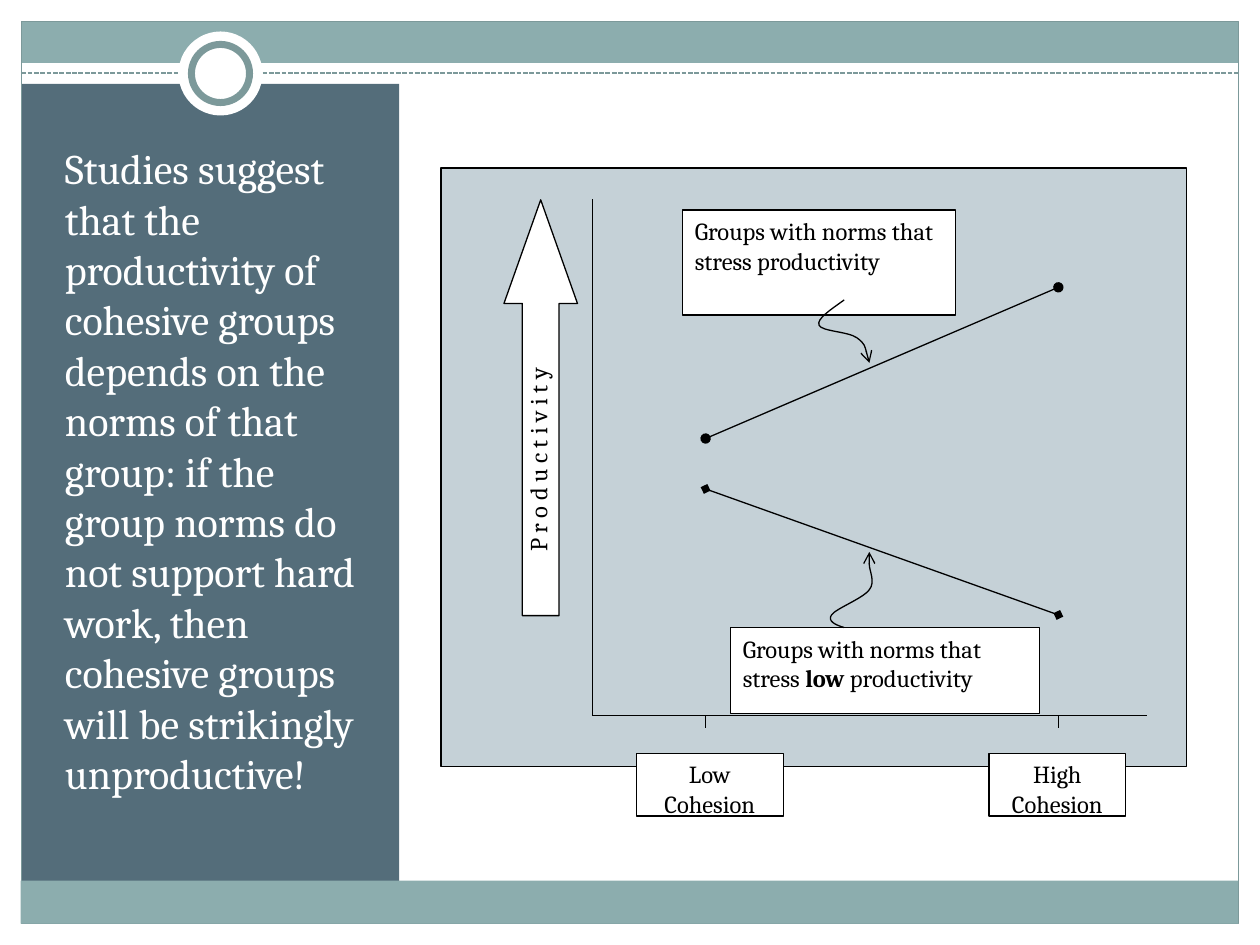
from lxml.etree import SubElement
from pptx import Presentation
from pptx.dml.color import RGBColor
from pptx.enum.dml import MSO_LINE
from pptx.enum.shapes import MSO_CONNECTOR, MSO_SHAPE
from pptx.enum.text import MSO_ANCHOR, PP_ALIGN
from pptx.oxml.ns import qn
from pptx.util import Pt

WHITE = RGBColor(0xFF, 0xFF, 0xFF)
BLACK = RGBColor(0x00, 0x00, 0x00)
SAGE = RGBColor(0x8C, 0xAD, 0xAE)
SAGE_DARK = RGBColor(0x7C, 0x99, 0x9A)
SLATE = RGBColor(0x54, 0x6D, 0x7A)
PANEL = RGBColor(0xC5, 0xD1, 0xD7)
FONT = "Cambria"
THIN = 0.75

AXIS_LEFT, AXIS_RIGHT, AXIS_TOP, AXIS_BOTTOM = 338.4, 655.2, 113.8, 409
LOW_X, HIGH_X = 403.2, 604.8

STATEMENT = (
    "Studies suggest that the productivity of cohesive groups depends on the "
    "norms of that group: if the group norms do not support hard work, then "
    "cohesive groups will be strikingly unproductive!"
)


def add_figure(slide, kind, box, fill=None, line=None, width=THIN):
    shape = slide.shapes.add_shape(kind, *map(Pt, box))
    shape.shadow.inherit = False
    if fill is None:
        shape.fill.background()
    else:
        shape.fill.solid()
        shape.fill.fore_color.rgb = fill
    if line is None:
        shape.line.fill.background()
    else:
        shape.line.color.rgb = line
        shape.line.width = Pt(width)
    return shape


def add_arrowheads(shape, head=None, tail=None):
    line = shape.line._get_or_add_ln()
    for tag, kind in (("a:headEnd", head), ("a:tailEnd", tail)):
        if kind:
            SubElement(line, qn(tag)).set("type", kind)


def add_line(slide, start, end, color=BLACK, width=THIN):
    connector = slide.shapes.add_connector(
        MSO_CONNECTOR.STRAIGHT, *map(Pt, (*start, *end)))
    connector.line.color.rgb = color
    connector.line.width = Pt(width)
    SubElement(connector._element.spPr, qn("a:effectLst"))
    return connector


def add_curved_arrow(slide, start, *controls):
    """Draw cubic curves; each three points after start make one curve."""
    builder = slide.shapes.build_freeform(Pt(start[0]), Pt(start[1]))
    builder.add_line_segments([(Pt(x), Pt(y)) for x, y in controls], close=False)
    shape = builder.convert_to_shape()
    segments = list(shape._element.iter(qn("a:lnTo")))
    for index in range(0, len(segments), 3):
        curve = SubElement(segments[index].getparent(), qn("a:cubicBezTo"))
        for segment in segments[index:index + 3]:
            curve.append(segment[0])
            segment.getparent().remove(segment)
    shape.shadow.inherit = False
    shape.fill.background()
    shape.line.color.rgb = BLACK
    shape.line.width = Pt(THIN)
    add_arrowheads(shape, tail="arrow")


def set_text(shape, runs, size=14, color=BLACK, alignment=PP_ALIGN.LEFT):
    """Fill a shape with one paragraph; runs are (text, bold) pairs."""
    frame = shape.text_frame
    frame.word_wrap = True
    frame.vertical_anchor = MSO_ANCHOR.TOP
    paragraph = frame.paragraphs[0]
    paragraph.alignment = alignment
    paragraph.font.name = FONT
    paragraph.font.size = Pt(size)
    paragraph.font.color.rgb = color
    for text, bold in runs:
        run = paragraph.add_run()
        run.text = text
        if bold:
            run.font.bold = True
    return paragraph


def add_label(slide, box, runs, alignment=PP_ALIGN.LEFT):
    shape = add_figure(slide, MSO_SHAPE.RECTANGLE, box, WHITE, BLACK)
    set_text(shape, runs, alignment=alignment)


def add_frame(slide):
    divider = add_line(slide, (12.2, 41.8), (707.8, 41.8), SAGE_DARK, 0.9)
    divider.line.dash_style = MSO_LINE.SQUARE_DOT
    add_figure(slide, MSO_SHAPE.RECTANGLE, (12.2, 12.2, 695.6, 23.8), SAGE)
    add_figure(slide, MSO_SHAPE.RECTANGLE, (12.2, 48, 216, 462.2), SLATE)
    add_figure(slide, MSO_SHAPE.RECTANGLE, (12.2, 12.2, 695.6, 515.6), line=SAGE_DARK)
    add_figure(slide, MSO_SHAPE.OVAL, (102, 18, 48, 48), WHITE)
    add_figure(slide, MSO_SHAPE.OVAL, (109.4, 25.4, 33.2, 33.2), WHITE, SAGE_DARK, 4)
    add_figure(slide, MSO_SHAPE.RECTANGLE, (11.8, 503.3, 695.6, 24.5), SAGE)


def add_statement(slide):
    box = slide.shapes.add_textbox(Pt(30), Pt(78), Pt(192), Pt(414))
    paragraph = set_text(box, [(STATEMENT, False)], 24, WHITE)
    paragraph.space_before = Pt(4.8)
    paragraph.space_after = Pt(10)


def add_diagram(slide):
    add_figure(slide, MSO_SHAPE.RECTANGLE, (252, 96, 426, 342), PANEL, BLACK)
    for low_y, high_y, marker in ((250.6, 164.2, "oval"), (279.4, 351.4, "diamond")):
        trend = add_line(slide, (LOW_X, low_y), (HIGH_X, high_y))
        add_arrowheads(trend, marker, marker)

    add_label(slide, (390, 120, 156, 60),
              [("Groups with norms that stress productivity", False)])
    add_label(slide, (417.4, 358.6, 176.6, 49.2),
              [("Groups with norms that stress ", False), ("low", True),
               (" productivity", False)])
    add_curved_arrow(slide, (482.4, 358.6),
                     (477.4, 357.1), (472.8, 355), (475.2, 351.4),
                     (477.6, 347.8), (493.2, 342), (496.8, 337),
                     (500.4, 332.6), (496.8, 326.2), (496.8, 322.6),
                     (496.8, 319), (496.8, 316.8), (496.8, 315.4))
    add_curved_arrow(slide, (482.4, 171.4),
                     (474.5, 177.1), (466.6, 182.2), (468, 185.8),
                     (469.4, 189.4), (484.6, 189.4), (489.6, 193),
                     (494.6, 196.6), (495.4, 202.3), (496.8, 207.4))

    add_line(slide, (AXIS_LEFT, AXIS_BOTTOM), (AXIS_RIGHT, AXIS_BOTTOM))
    add_line(slide, (AXIS_LEFT, AXIS_BOTTOM), (AXIS_LEFT, AXIS_TOP))
    for x in (LOW_X, HIGH_X):
        add_line(slide, (x, AXIS_BOTTOM), (x, AXIS_BOTTOM + 7.2))

    arrow = add_figure(slide, MSO_SHAPE.UP_ARROW, (288, 114.2, 42, 237.6), WHITE, BLACK)
    arrow.adjustments[0] = 0.5
    arrow.adjustments[1] = 1.41
    axis_title = slide.shapes.add_textbox(Pt(237.6), Pt(247.7), Pt(145.4), Pt(30.2))
    axis_title.rotation = 270
    set_text(axis_title, [("P r o d u c t i v i t y", False)],
             alignment=PP_ALIGN.CENTER)

    for left, width, text in ((363.6, 84, "Low Cohesion"), (565.2, 78, "High Cohesion")):
        add_label(slide, (left, 430.4, width, 36), [(text, False)], PP_ALIGN.CENTER)


def main():
    presentation = Presentation()
    presentation.slide_width = Pt(720)
    presentation.slide_height = Pt(540)
    slide = presentation.slides.add_slide(presentation.slide_layouts[6])
    add_frame(slide)
    add_statement(slide)
    add_diagram(slide)
    presentation.save("out.pptx")


if __name__ == "__main__":
    main()
